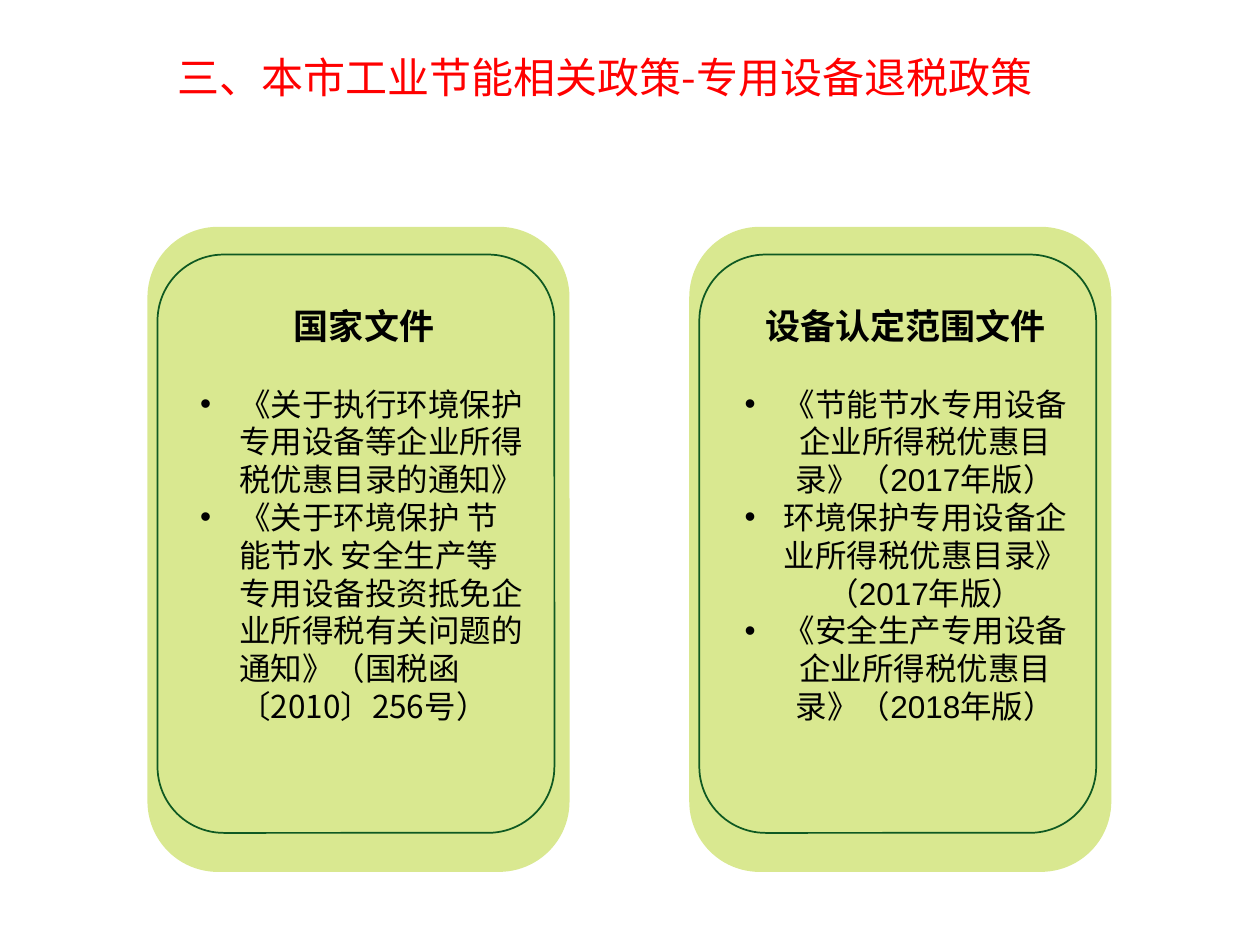
from pptx import Presentation
from pptx.dml.color import RGBColor
from pptx.enum.shapes import MSO_SHAPE as Shape
from pptx.enum.text import MSO_ANCHOR as Anchor, PP_ALIGN as Align
from pptx.oxml.ns import qn
from pptx.util import Inches, Pt
from lxml.etree import SubElement

RED = RGBColor(0xFF, 0x00, 0x00)
BLACK = RGBColor(0x00, 0x00, 0x00)
LIME = RGBColor(0xD9, 0xE8, 0x90)
GREEN = RGBColor(0x0F, 0x59, 0x22)
CJK = "Noto Sans CJK SC"


def write(para, text, *, size, color=BLACK, font=CJK, bold=False,
          align=Align.LEFT, bullet=False, before=0):
    """Fill a paragraph with one formatted span."""
    para.alignment = align
    para.line_spacing = Pt(size * 1.2)
    para.space_before = Pt(before)
    if bullet:
        props = para._p.get_or_add_pPr()
        props.set("marL", str(Inches(0.31)))
        props.set("indent", str(-Inches(0.31)))
        SubElement(props, qn("a:buFont")).set("typeface", "Arial")
        SubElement(props, qn("a:buChar")).set("char", "•")
    span = para.add_run()
    span.text = text
    span.font.size = Pt(size)
    span.font.bold = bold
    span.font.color.rgb = color
    span.font.name = font
    SubElement(span._r.get_or_add_rPr(), qn("a:ea")).set("typeface", CJK)


class PolicySlide:
    """Hold the style and the current slide."""

    def __init__(self, deck):
        self.page = deck.slides.add_slide(deck.slide_layouts[5])

    def title(self, text):
        """Place the title at the top."""
        box = self.page.shapes.title
        box.left, box.top = Inches(1.31), Inches(0)
        box.width, box.height = Inches(9), Inches(1.22)
        box.text_frame.vertical_anchor = Anchor.MIDDLE
        write(box.text_frame.paragraphs[0], text, size=24, color=RED)

    def panel(self, group, left, top, width, height, fill=None, line=None):
        """Add a rounded rectangle to a card."""
        box = group.shapes.add_shape(Shape.ROUNDED_RECTANGLE, Inches(left),
                                     Inches(top), Inches(width), Inches(height))
        box.shadow.inherit = False
        box.adjustments[0] = 0.167
        if fill:
            box.fill.solid()
            box.fill.fore_color.rgb = fill
        else:
            box.fill.background()
        if line:
            box.line.color.rgb = line
            box.line.width = Pt(1)
        else:
            box.line.fill.background()

    def card(self, left, heading, items, font, align):
        """Add a framed card with a heading and a bulleted list."""
        group = self.page.shapes.add_group_shape()
        self.panel(group, left, 1.8, 3.35, 5.12, fill=LIME)
        self.panel(group, left + 0.08, 2.02, 3.15, 4.59, line=GREEN)
        box = group.shapes.add_textbox(Inches(left + 0.32), Inches(2.37),
                                       Inches(2.8), Inches(3.47))
        frame = box.text_frame
        frame.word_wrap = True
        write(frame.paragraphs[0], heading, size=20, bold=True, align=Align.CENTER)
        for index, item in enumerate(items):
            write(frame.add_paragraph(), item, size=18, font=font, align=align,
                  bullet=True, before=0 if index else 21.6)


def main():
    """Build and save the slide."""
    deck = Presentation()
    deck.slide_width, deck.slide_height = Inches(10), Inches(7.5)
    slide = PolicySlide(deck)
    slide.title("三、本市工业节能相关政策-专用设备退税政策")
    slide.card(1.17, "国家文件", [
        "《关于执行环境保护专用设备等企业所得税优惠目录的通知》",
        "《关于环境保护 节能节水 安全生产等专用设备投资抵免企业所得税有关问题的通知》（国税函〔2010〕256号）",
    ], CJK, Align.LEFT)
    slide.card(5.47, "设备认定范围文件", [
        "《节能节水专用设备企业所得税优惠目录》（2017年版）",
        "环境保护专用设备企业所得税优惠目录》（2017年版）",
        "《安全生产专用设备企业所得税优惠目录》（2018年版）",
    ], "Arial", Align.CENTER)
    deck.save("out.pptx")


if __name__ == "__main__":
    main()
